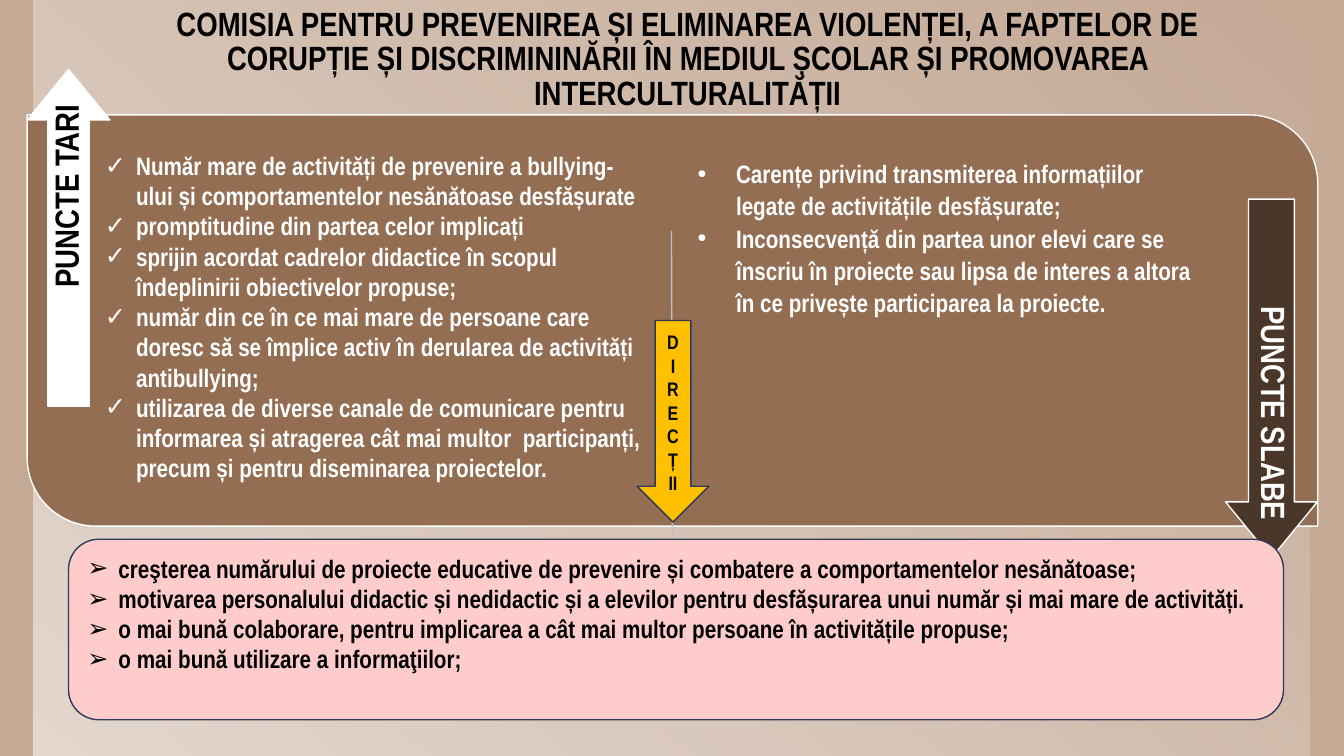
from lxml import etree
from pptx import Presentation
from pptx.dml.color import RGBColor
from pptx.enum.shapes import MSO_CONNECTOR, MSO_SHAPE
from pptx.enum.text import MSO_ANCHOR, MSO_AUTO_SIZE, PP_ALIGN
from pptx.oxml.ns import qn
from pptx.util import Inches, Pt

RECTANGLE = MSO_SHAPE.RECTANGLE
ROUNDED = MSO_SHAPE.ROUNDED_RECTANGLE
DIAGONAL_ROUNDED = MSO_SHAPE.ROUND_2_DIAG_RECTANGLE
RIGHT_ARROW = MSO_SHAPE.RIGHT_ARROW
DOWN_ARROW = MSO_SHAPE.DOWN_ARROW
STRAIGHT = MSO_CONNECTOR.STRAIGHT
TOP, MIDDLE, BOTTOM = MSO_ANCHOR.TOP, MSO_ANCHOR.MIDDLE, MSO_ANCHOR.BOTTOM
LEFT, CENTER, RIGHT = PP_ALIGN.LEFT, PP_ALIGN.CENTER, PP_ALIGN.RIGHT
NO_AUTOFIT = MSO_AUTO_SIZE.NONE

SAND = RGBColor(0xC4, 0xA9, 0x95)
BROWN = RGBColor(0x93, 0x6E, 0x53)
DARK_BROWN = RGBColor(0x4A, 0x37, 0x29)
PINK = RGBColor(0xFF, 0xCC, 0xCC)
AMBER = RGBColor(0xFF, 0xC0, 0x00)
NAVY = RGBColor(0x30, 0x3A, 0x58)
GREY = RGBColor(0xC0, 0xC2, 0xCA)
WHITE = RGBColor(0xFF, 0xFF, 0xFF)
BLACK = RGBColor(0x00, 0x00, 0x00)
NEAR_BLACK = RGBColor(0x08, 0x08, 0x08)

TITLE = ("COMISIA PENTRU PREVENIREA ȘI ELIMINAREA VIOLENȚEI, A FAPTELOR DE "
         "CORUPȚIE ȘI DISCRIMININĂRII ÎN MEDIUL ȘCOLAR ȘI PROMOVAREA "
         "INTERCULTURALITĂȚII")
STRENGTHS = [
    "Număr mare de activități de prevenire a bullying-ului și comportamentelor "
    "nesănătoase desfășurate",
    "promptitudine din partea celor implicați",
    "sprijin acordat cadrelor didactice în scopul îndeplinirii obiectivelor propuse;",
    "număr din ce în ce mai mare de persoane care doresc să se împlice activ în "
    "derularea de activități antibullying;",
    "utilizarea de diverse canale de comunicare pentru informarea și atragerea cât "
    "mai multor  participanți, precum și pentru diseminarea proiectelor.",
]
WEAKNESSES = [
    "Carențe privind transmiterea informațiilor legate de activitățile desfășurate;",
    "Inconsecvență din partea unor elevi care se înscriu în proiecte sau lipsa de "
    "interes a altora în ce privește participarea la proiecte.",
]
DIRECTIONS = [
    "creşterea numărului de proiecte educative de prevenire și combatere a "
    "comportamentelor nesănătoase;",
    "motivarea personalului didactic și nedidactic și a elevilor pentru desfășurarea "
    "unui număr și mai mare de activități.",
    "o mai bună colaborare, pentru implicarea a cât mai multor persoane în "
    "activitățile propuse;",
    "o mai bună utilizare a informaţiilor;",
]


class SlideBuilder:
    font_name = "Arial Narrow"

    def __init__(self, slide):
        self.slide = slide

    def shape(self, kind, box, fill=None, line=None, adjustments=(), rotation=0):
        shape = self.slide.shapes.add_shape(kind, *map(Inches, box))
        shape.shadow.inherit = False
        shape.rotation = rotation
        for index, value in enumerate(adjustments):
            shape.adjustments[index] = value
        if fill is not None:
            shape.fill.solid()
            shape.fill.fore_color.rgb = fill
        if line is None:
            shape.line.fill.background()
        else:
            shape.line.color.rgb = line
            shape.line.width = Pt(1)
        return shape

    def fading_panel(self, box, angle, opacities):
        shape = self.shape(RECTANGLE, box)
        shape.fill.gradient()
        shape.fill.gradient_angle = angle
        for stop in shape.fill.gradient_stops:
            stop.color.rgb = WHITE
        for color, opacity in zip(shape.element.iter(qn("a:srgbClr")), opacities):
            etree.SubElement(color, qn("a:alpha"), val=str(opacity * 1000))

    def line(self, start, end, color):
        connector = self.slide.shapes.add_connector(
            STRAIGHT, *map(Inches, (*start, *end)))
        connector.line.color.rgb = color
        connector.line.width = Pt(1)
        etree.SubElement(connector.element.spPr, qn("a:effectLst"))

    def text(self, shape, lines, size, color, align=LEFT, anchor=TOP,
             insets=(0.1, 0.05), spacing=1.0, bullet=None, indent=0.31):
        frame = shape.text_frame
        frame.word_wrap = True
        frame.auto_size = NO_AUTOFIT
        frame.vertical_anchor = anchor
        frame.margin_left = frame.margin_right = Inches(insets[0])
        frame.margin_top = frame.margin_bottom = Inches(insets[1])
        for index, line in enumerate(lines):
            paragraph = frame.add_paragraph() if index else frame.paragraphs[0]
            paragraph.alignment = align
            paragraph.line_spacing = spacing
            paragraph.space_before = Pt(0)
            if bullet:
                self.bullet(paragraph, bullet, indent)
            run = paragraph.add_run()
            run.text = line
            run.font.name = self.font_name
            run.font.size = Pt(size)
            run.font.bold = True
            run.font.color.rgb = color

    def bullet(self, paragraph, character, indent):
        properties = paragraph._p.get_or_add_pPr()
        properties.set("marL", str(Inches(indent)))
        properties.set("indent", str(-Inches(indent)))
        etree.SubElement(properties, qn("a:buFont"), typeface="Arial")
        etree.SubElement(properties, qn("a:buChar"), char=character)

    def placeholder(self, index, box, lines, size, color, **style):
        shape = self.slide.placeholders[index]
        shape.left, shape.top, shape.width, shape.height = map(Inches, box)
        shape.element.getparent().append(shape.element)  # bring to front
        self.text(shape, lines, size, color, **style)

    def label(self, box, text, color, rotation):
        shape = self.slide.shapes.add_textbox(*map(Inches, box))
        shape.rotation = rotation
        self.text(shape, [text], 24, color, align=RIGHT, anchor=MIDDLE,
                  insets=(0.1, 0.1), spacing=0.9)


def main():
    presentation = Presentation()
    presentation.slide_width = Inches(13.33)
    presentation.slide_height = Inches(7.5)
    slide = presentation.slides.add_slide(presentation.slide_layouts[3])
    slide.background.fill.solid()
    slide.background.fill.fore_color.rgb = SAND
    builder = SlideBuilder(slide)

    # Backdrop and title
    builder.fading_panel((0.33, 0, 12.66, 7.5), 230, (0, 55))
    builder.placeholder(0, (1.23, 0.19, 11.18, 0.99), [TITLE], 24, BLACK,
                        align=CENTER, anchor=BOTTOM, insets=(0.13, 0.07),
                        spacing=0.85)

    # Panel with its divider
    builder.shape(DIAGONAL_ROUNDED, (0.27, 1.14, 12.8, 4.08), BROWN, WHITE,
                  (0, 0.167))
    builder.line((6.66, 2.29), (6.67, 5.77), GREY)

    # Side arrows with labels
    head = (0.5, 0.61)
    builder.shape(RIGHT_ARROW, (-0.99, 1.95, 3.34, 0.82), WHITE, WHITE, head, 270)
    builder.label((-0.87, 2.28, 3.09, 0.41), "PUNCTE TARI", BLACK, 270)
    builder.shape(RIGHT_ARROW, (10.83, 3.3, 3.56, 0.91), DARK_BROWN, WHITE, head, 90)
    builder.label((10.97, 3.39, 3.29, 0.45), "PUNCTE SLABE", WHITE, 90)

    # Strengths and weaknesses
    builder.placeholder(1, (0.94, 1.44, 5.57, 3.43), STRENGTHS, 18, WHITE, bullet="✓")
    builder.placeholder(2, (6.82, 1.5, 5.2, 1.7), WEAKNESSES, 18, WHITE,
                        spacing=1.07, bullet="•", indent=0.38)

    # Directions
    directions = builder.shape(ROUNDED, (0.68, 5.35, 12.05, 1.79), PINK, NAVY)
    builder.text(directions, DIRECTIONS, 18, BLACK, bullet="➢")
    arrow = builder.shape(DOWN_ARROW, (6.32, 3.18, 0.71, 2), AMBER, NAVY)
    builder.text(arrow, ["DIRECȚ", "II"], 14, NEAR_BLACK, align=CENTER, anchor=MIDDLE)

    presentation.save("out.pptx")


if __name__ == "__main__":
    main()
